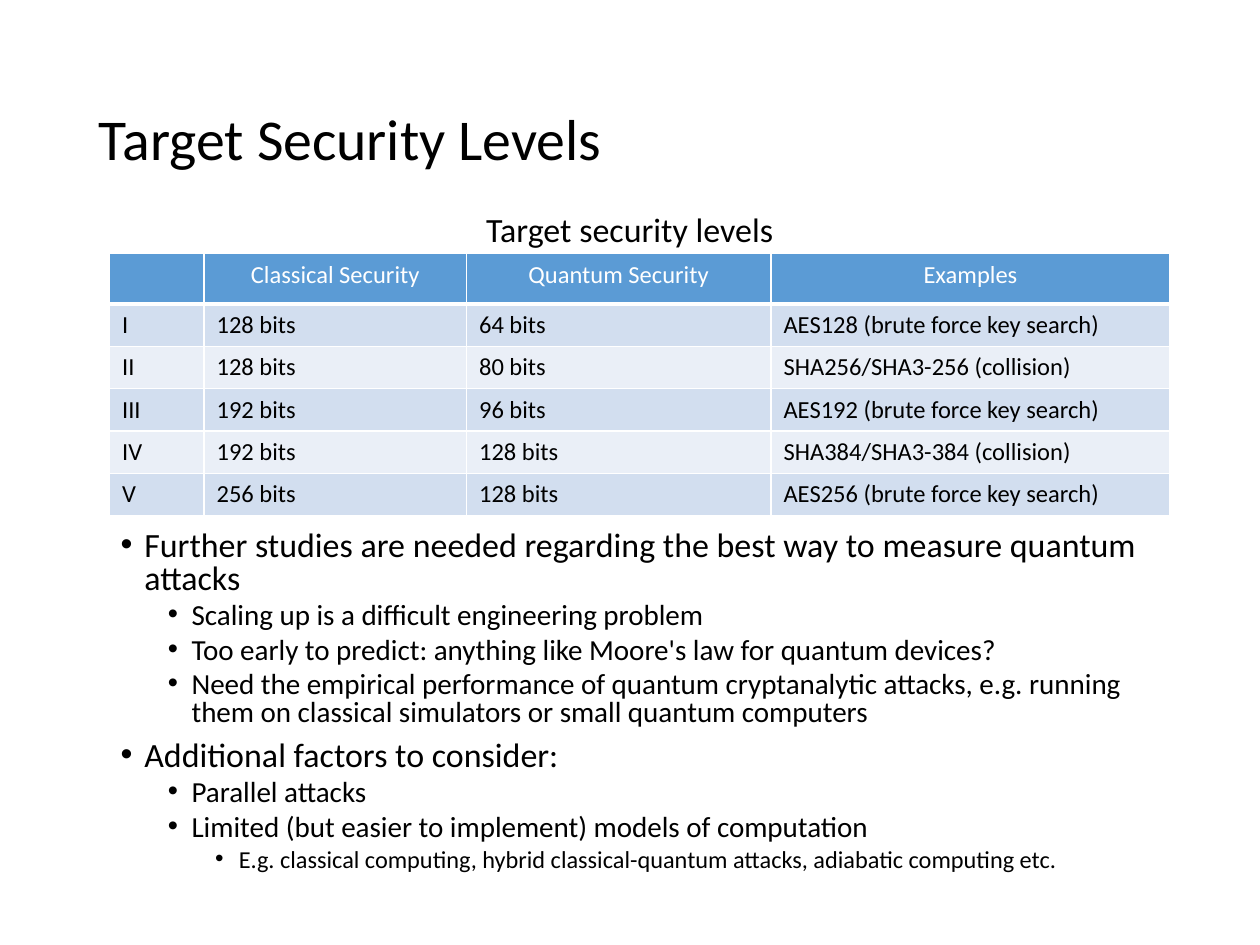
from dataclasses import dataclass

from lxml.etree import SubElement
from pptx import Presentation
from pptx.dml.color import RGBColor
from pptx.enum.text import MSO_ANCHOR, PP_ALIGN
from pptx.oxml.ns import qn
from pptx.util import Pt


@dataclass(frozen=True)
class Theme:
    font: str = "Calibri"
    ink: str = "000000"
    paper: str = "FFFFFF"
    header: str = "5B9BD5"
    bands: tuple = ("D2DEEF", "EAEFF7")
    title: float = 33
    cell: float = 14
    levels: tuple = (19.4, 16.6, 13.9)
    space_before: tuple = (7.5, 3.8, 3.8)
    indent: float = 13.5
    level_step: float = 27


def write(p, text, *, font, size, color, align=PP_ALIGN.LEFT, spacing=None, before=0):
    p.alignment = align
    p.space_before = Pt(before)
    if spacing:
        p.line_spacing = spacing
    r = p.add_run()
    r.text = text
    r.font.name = font
    r.font.size = Pt(size)
    r.font.bold = False
    r.font.color.rgb = RGBColor.from_string(color)


class SlideBuilder:
    def __init__(self, slide, theme):
        self.slide = slide
        self.theme = theme

    def frame(self, box, anchor=MSO_ANCHOR.TOP):
        tf = self.slide.shapes.add_textbox(*map(Pt, box)).text_frame
        tf.word_wrap = True
        tf.vertical_anchor = anchor
        return tf

    def text(self, box, text, size, anchor=MSO_ANCHOR.TOP, **fmt):
        tf = self.frame(box, anchor)
        write(tf.paragraphs[0], text, font=self.theme.font, size=size,
              color=self.theme.ink, **fmt)

    def bullets(self, box, items):
        t = self.theme
        tf = self.frame(box)
        for i, (level, text) in enumerate(items):
            p = tf.add_paragraph() if i else tf.paragraphs[0]
            p.level = level
            write(p, text, font=t.font, size=t.levels[level], color=t.ink,
                  spacing=0.8, before=t.space_before[level])
            pPr = p._p.get_or_add_pPr()
            pPr.set("marL", str(Pt(t.indent + level * t.level_step)))
            pPr.set("indent", str(-Pt(t.indent)))
            SubElement(pPr, qn("a:buFont"), typeface="Arial")
            SubElement(pPr, qn("a:buChar"), char="•")

    def borders(self, cell, bottom):
        tcPr = cell._tc.get_or_add_tcPr()
        for side, width in (("L", 1), ("R", 1), ("T", 1), ("B", bottom)):
            ln = SubElement(tcPr, qn(f"a:ln{side}"), w=str(Pt(width)))
            fill = SubElement(ln, qn("a:solidFill"))
            SubElement(fill, qn("a:srgbClr"), val=self.theme.paper)

    def table(self, left, top, widths, row_height, rows):
        t = self.theme
        tbl = self.slide.shapes.add_table(
            len(rows), len(widths), Pt(left), Pt(top),
            Pt(sum(widths)), Pt(row_height * len(rows))).table
        tbl.horz_banding = False
        for col, width in zip(tbl.columns, widths):
            col.width = Pt(width)
        for i, row in enumerate(rows):
            tbl.rows[i].height = Pt(row_height)
            head = i == 0
            color = t.header if head else t.bands[(i - 1) % 2]
            for j, text in enumerate(row):
                cell = tbl.cell(i, j)
                self.borders(cell, bottom=3 if head else 1)
                cell.fill.solid()
                cell.fill.fore_color.rgb = RGBColor.from_string(color)
                write(cell.text_frame.paragraphs[0], text, font=t.font, size=t.cell,
                      color=t.paper if head else t.ink,
                      align=PP_ALIGN.CENTER if head else PP_ALIGN.LEFT)


LEVELS = [
    ("", "Classical Security", "Quantum Security", "Examples"),
    ("I", "128 bits", "64 bits", "AES128 (brute force key search)"),
    ("II", "128 bits", "80 bits", "SHA256/SHA3-256 (collision)"),
    ("III", "192 bits", "96 bits", "AES192 (brute force key search)"),
    ("IV", "192 bits", "128 bits", "SHA384/SHA3-384 (collision)"),
    ("V", "256 bits", "128 bits", "AES256 (brute force key search)"),
]

POINTS = [
    (0, "Further studies are needed regarding the best way to measure quantum attacks"),
    (1, "Scaling up is a difficult engineering problem"),
    (1, "Too early to predict: anything like Moore's law for quantum devices?"),
    (1, "Need the empirical performance of quantum cryptanalytic attacks, "
        "e.g. running them on classical simulators or small quantum computers"),
    (0, "Additional factors to consider:"),
    (1, "Parallel attacks"),
    (1, "Limited (but easier to implement) models of computation"),
    (2, "E.g. classical computing, hybrid classical-quantum attacks, "
        "adiabatic computing etc."),
]


def main():
    prs = Presentation()
    prs.slide_width, prs.slide_height = Pt(720), Pt(540)
    theme = Theme()
    s = SlideBuilder(prs.slides.add_slide(prs.slide_layouts[6]), theme)
    s.text((49.5, 28.8, 621, 104.4), "Target Security Levels", theme.title,
           MSO_ANCHOR.MIDDLE, spacing=0.9)
    s.text((49.5, 120.2, 621, 26.6), "Target security levels", theme.levels[0],
           align=PP_ALIGN.CENTER, spacing=0.8, before=theme.space_before[0])
    s.table(62.6, 144.9, (54, 150, 174, 228), 24.2, LEVELS)
    s.bullets((61.9, 300.2, 609.1, 210.2), POINTS)
    prs.save("out.pptx")


if __name__ == "__main__":
    main()
